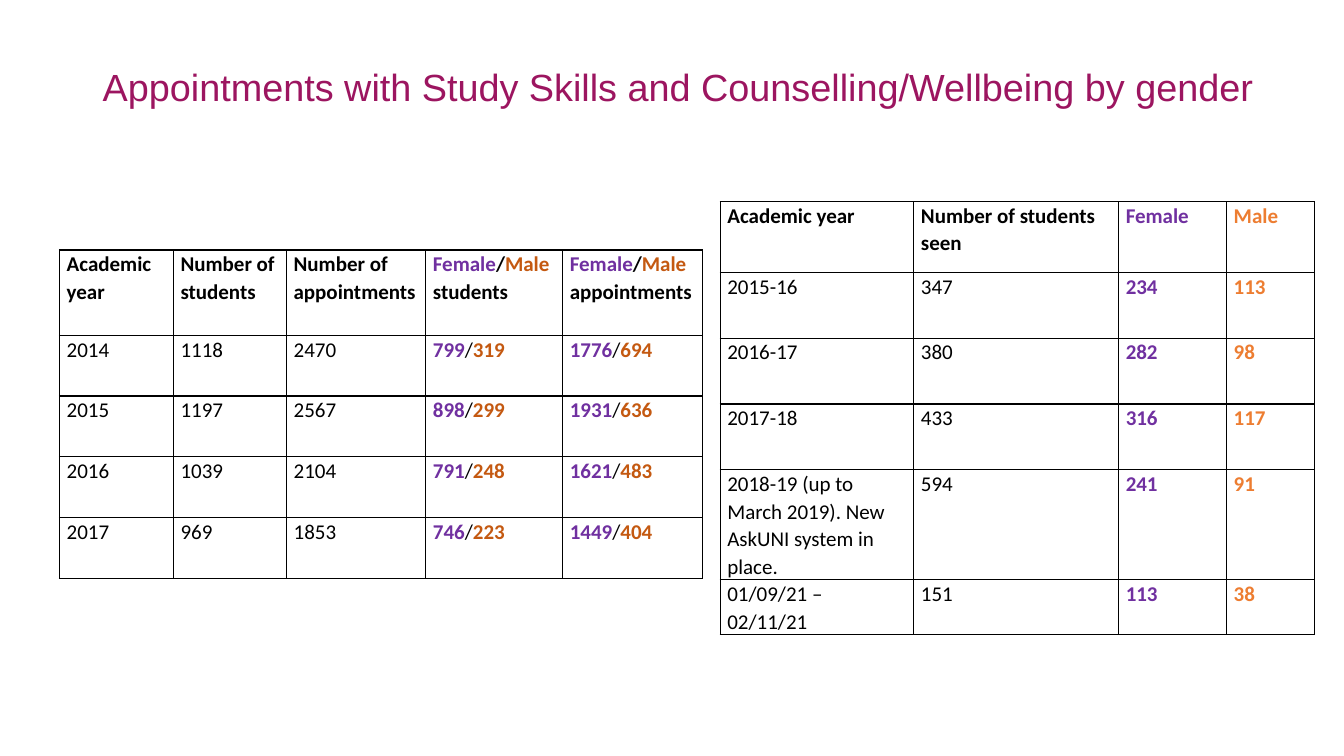
from lxml import etree
from pptx import Presentation
from pptx import util as u
from pptx.dml.color import RGBColor
from pptx.enum import text
from pptx.oxml.ns import qn

BLACK, PURPLE, ORANGE, RUST, PLUM = "000000", "7030A0", "ED7D31", "C45911", "9C1560"


def colour(value):
    """Turn a hex string into a colour."""
    return RGBColor.from_string(value)


def assign(target, values):
    """Set each attribute of the target from a dict."""
    for name, value in values.items():
        setattr(target, name, value)


class Page:
    """Hold the style and the slide, and add elements to it."""

    table_font = {"name": "Calibri", "size": u.Pt(15)}
    table_para = {"line_spacing": 1.07, "space_after": u.Pt(8)}
    cell_format = {"margin_left": u.Cm(0.18), "margin_right": u.Cm(0.18),
                   "margin_top": 0, "margin_bottom": 0}
    title_font = {"name": "Arial", "size": u.Pt(27)}

    def __init__(self, deck):
        """Add a blank slide to the deck."""
        self.slide = deck.slides.add_slide(deck.slide_layouts[6])

    def add_spans(self, para, spans, font):
        """Add spans of text, colour and weight to a paragraph."""
        for words, tint, bold in spans:
            span = para.add_run()
            span.text = words
            assign(span.font, {**font, "bold": bold})
            span.font.color.rgb = colour(tint)

    def title(self, words, left, top, width, height):
        """Add the slide title."""
        box = self.slide.shapes.add_textbox(*map(u.Cm, (left, top, width, height)))
        assign(box.text_frame, {"word_wrap": True,
                                "vertical_anchor": text.MSO_ANCHOR.MIDDLE})
        para = box.text_frame.paragraphs[0]
        para.line_spacing = 0.9
        self.add_spans(para, [(words, PLUM, False)], self.title_font)

    def border(self, cell):
        """Draw a thin black line on every side of a cell."""
        properties = cell._tc.get_or_add_tcPr()
        for index, side in enumerate(("a:lnL", "a:lnR", "a:lnT", "a:lnB")):
            line = etree.Element(qn(side), w=str(u.Pt(1)))
            fill = etree.SubElement(line, qn("a:solidFill"))
            etree.SubElement(fill, qn("a:srgbClr"), val=BLACK)
            properties.insert(index, line)

    def table(self, rows, left, top, widths, heights):
        """Add a bordered table whose cells are lists of spans."""
        frame = self.slide.shapes.add_table(
            len(rows), len(widths), u.Cm(left), u.Cm(top),
            u.Cm(sum(widths)), u.Cm(sum(heights)))
        table = frame.table
        assign(table, {"first_row": False, "horz_banding": False})
        for column, width in zip(table.columns, widths):
            column.width = u.Cm(width)
        for row, height, contents in zip(table.rows, heights, rows):
            row.height = u.Cm(height)
            for cell, spans in zip(row.cells, contents):
                assign(cell, self.cell_format)
                cell.fill.background()
                self.border(cell)
                para = cell.text_frame.paragraphs[0]
                assign(para, self.table_para)
                self.add_spans(para, spans, self.table_font)


def plain(words, tint=BLACK, bold=False):
    """Return a cell of one span."""
    return [(str(words), tint, bold)]


def pair(female, male, bold_slash=False):
    """Return a cell with female and male values in their colours."""
    return [(str(female), PURPLE, True), ("/", BLACK, bold_slash),
            (str(male), RUST, True)]


def main():
    """Build the slide and save it."""
    deck = Presentation()
    assign(deck, {"slide_width": u.Cm(33.87), "slide_height": u.Cm(19.05)})
    page = Page(deck)
    page.title("Appointments with Study Skills and Counselling/Wellbeing by gender",
               2.34, 1.02, 30.02, 2.44)

    counselling = [
        ("2015-16", 347, 234, 113),
        ("2016-17", 380, 282, 98),
        ("2017-18", 433, 316, 117),
        ("2018-19 (up to March 2019). New AskUNI system in place.", 594, 241, 91),
        ("01/09/21 – 02/11/21", 151, 113, 38),
    ]
    rows = [[plain("Academic year", bold=True),
             plain("Number of students seen", bold=True),
             plain("Female", PURPLE, True), plain("Male", ORANGE, True)]]
    rows += [[plain(year), plain(seen), plain(female, PURPLE, True),
              plain(male, ORANGE, True)]
             for year, seen, female, male in counselling]
    page.table(rows, 18.15, 5.08, [4.88, 5.16, 2.72, 2.22],
               [1.78, 1.66, 1.66, 1.66, 2.77, 1.38])

    study_skills = [
        (2014, 1118, 2470, (799, 319), (1776, 694)),
        (2015, 1197, 2567, (898, 299), (1931, 636)),
        (2016, 1039, 2104, (791, 248), (1621, 483)),
        (2017, 969, 1853, (746, 223), (1449, 404)),
    ]
    rows = [[plain(words, bold=True) for words in
             ("Academic year", "Number of students", "Number of appointments")]
            + [pair("Female", "Male", True) + plain(" " + words, bold=True)
               for words in ("students", "appointments")]]
    rows += [[*map(plain, counts), pair(*students), pair(*appointments)]
             for *counts, students, appointments in study_skills]
    page.table(rows, 1.5, 6.3, [2.87, 2.85, 3.51, 3.45, 3.53],
               [2.15] + [1.53] * len(study_skills))
    deck.save("out.pptx")


if __name__ == "__main__":
    main()
